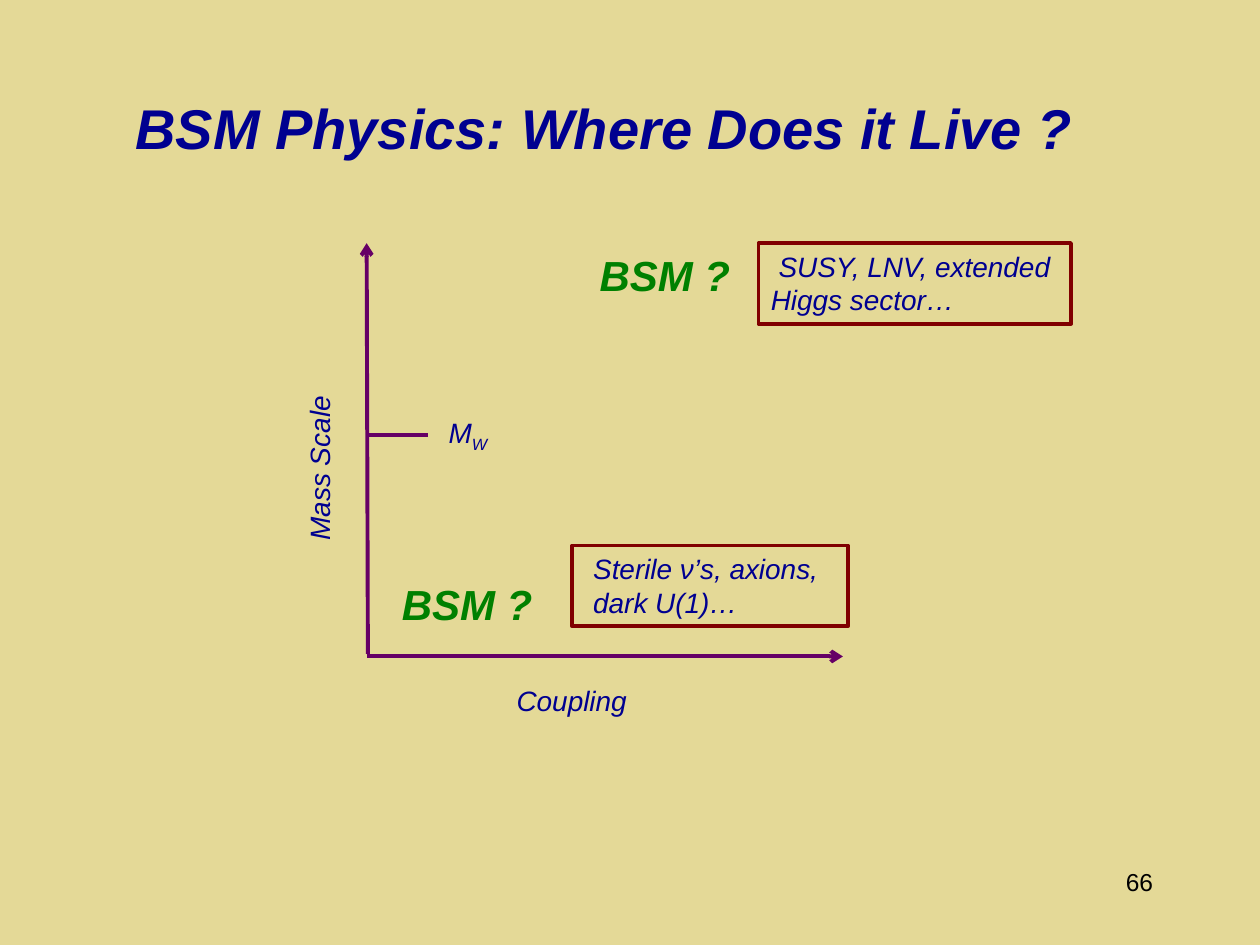
from dataclasses import dataclass

from lxml import etree
from pptx import Presentation
from pptx.dml.color import RGBColor
from pptx.enum import shapes, text
from pptx.oxml.ns import qn
from pptx.util import Inches, Pt


@dataclass(frozen=True)
class Theme:
    font: str = "Arial"
    background: str = "E4D997"
    navy: str = "000090"
    green: str = "008000"
    purple: str = "660066"
    maroon: str = "800000"
    black: str = "000000"
    title_size: int = 32
    region_size: int = 24
    label_size: int = 16
    number_size: int = 14
    line_width: float = 2.25


THEME = Theme()

TITLE = ("BSM Physics: Where Does it Live ?", (0.92, 0.67, 7.75, 0.67))
PAGE_NUMBER = ("66", (7.17, 6.83, 2.08, 0.5))

AXIS_LABELS = [
    ([" Mass Scale"], (1.7, 3.43, 1.67, 0.37), 270),
    ([" Coupling"], (3.94, 5.38, 1.67, 0.37), 0),
    ([" M", "W"], (3.4, 3.25, 0.72, 0.37), 0),
]

LINES = [
    ((2.92, 5.19), (2.91, 1.93), True),
    ((2.91, 5.21), (6.69, 5.21), True),
    ((2.91, 3.45), (3.4, 3.45), False),
]

REGIONS = [
    {
        "heading": (4.66, 1.93, 2.38, 0.5),
        "examples": " SUSY, LNV, extended Higgs sector…",
        "text_area": (6.02, 1.93, 2.64, 0.64),
        "frame": (6.02, 1.93, 2.48, 0.64),
    },
    {
        "heading": (3.09, 4.54, 2.38, 0.5),
        "examples": "Sterile ν’s, axions, dark U(1)…",
        "text_area": (4.61, 4.33, 2.43, 0.64),
        "frame": (4.54, 4.33, 2.19, 0.64),
    },
]


def inches(values):
    return [Inches(value) for value in values]


def add_text(slide, content, area, *, subscript="", size=THEME.label_size,
             color=THEME.navy, bold=False, italic=True, rotation=0,
             align=text.PP_ALIGN.LEFT, anchor=text.MSO_ANCHOR.TOP):
    shape = slide.shapes.add_textbox(*inches(area))
    shape.rotation = rotation
    frame = shape.text_frame
    frame.word_wrap = True
    frame.vertical_anchor = anchor
    paragraph = frame.paragraphs[0]
    paragraph.alignment = align
    for part in filter(None, (content, subscript)):
        run = paragraph.add_run()
        run.text = part
        run.font.name = THEME.font
        run.font.size = Pt(size)
        run.font.bold = bold
        run.font.italic = italic
        run.font.color.rgb = RGBColor.from_string(color)
    if subscript:
        run.font._element.set("baseline", "-25000")


def style_line(line, color):
    line.color.rgb = RGBColor.from_string(color)
    line.width = Pt(THEME.line_width)


def add_line(slide, start, end, arrow):
    connector = slide.shapes.add_connector(
        shapes.MSO_CONNECTOR.STRAIGHT, *inches(start + end))
    style_line(connector.line, THEME.purple)
    properties = connector._element.spPr
    if arrow:
        etree.SubElement(properties.find(qn("a:ln")), qn("a:tailEnd"), type="arrow")
    etree.SubElement(properties, qn("a:effectLst"))


def add_region(slide, region):
    add_text(slide, "BSM ?", region["heading"], size=THEME.region_size,
             color=THEME.green, bold=True)
    add_text(slide, region["examples"], region["text_area"])
    frame = slide.shapes.add_shape(
        shapes.MSO_SHAPE.RECTANGLE, *inches(region["frame"]))
    frame.shadow.inherit = False
    frame.fill.background()
    style_line(frame.line, THEME.maroon)


def main():
    presentation = Presentation()
    presentation.slide_width, presentation.slide_height = inches((10, 7.5))
    slide = presentation.slides.add_slide(presentation.slide_layouts[6])
    slide.background.fill.solid()
    slide.background.fill.fore_color.rgb = RGBColor.from_string(THEME.background)

    add_text(slide, *PAGE_NUMBER, size=THEME.number_size, color=THEME.black,
             italic=False, align=text.PP_ALIGN.RIGHT)
    add_text(slide, *TITLE, size=THEME.title_size, bold=True,
             align=text.PP_ALIGN.CENTER, anchor=text.MSO_ANCHOR.MIDDLE)
    for start, end, arrow in LINES:
        add_line(slide, start, end, arrow)
    for parts, area, rotation in AXIS_LABELS:
        add_text(slide, parts[0], area, subscript="".join(parts[1:]),
                 rotation=rotation)
    for region in REGIONS:
        add_region(slide, region)

    presentation.save("out.pptx")


if __name__ == "__main__":
    main()
